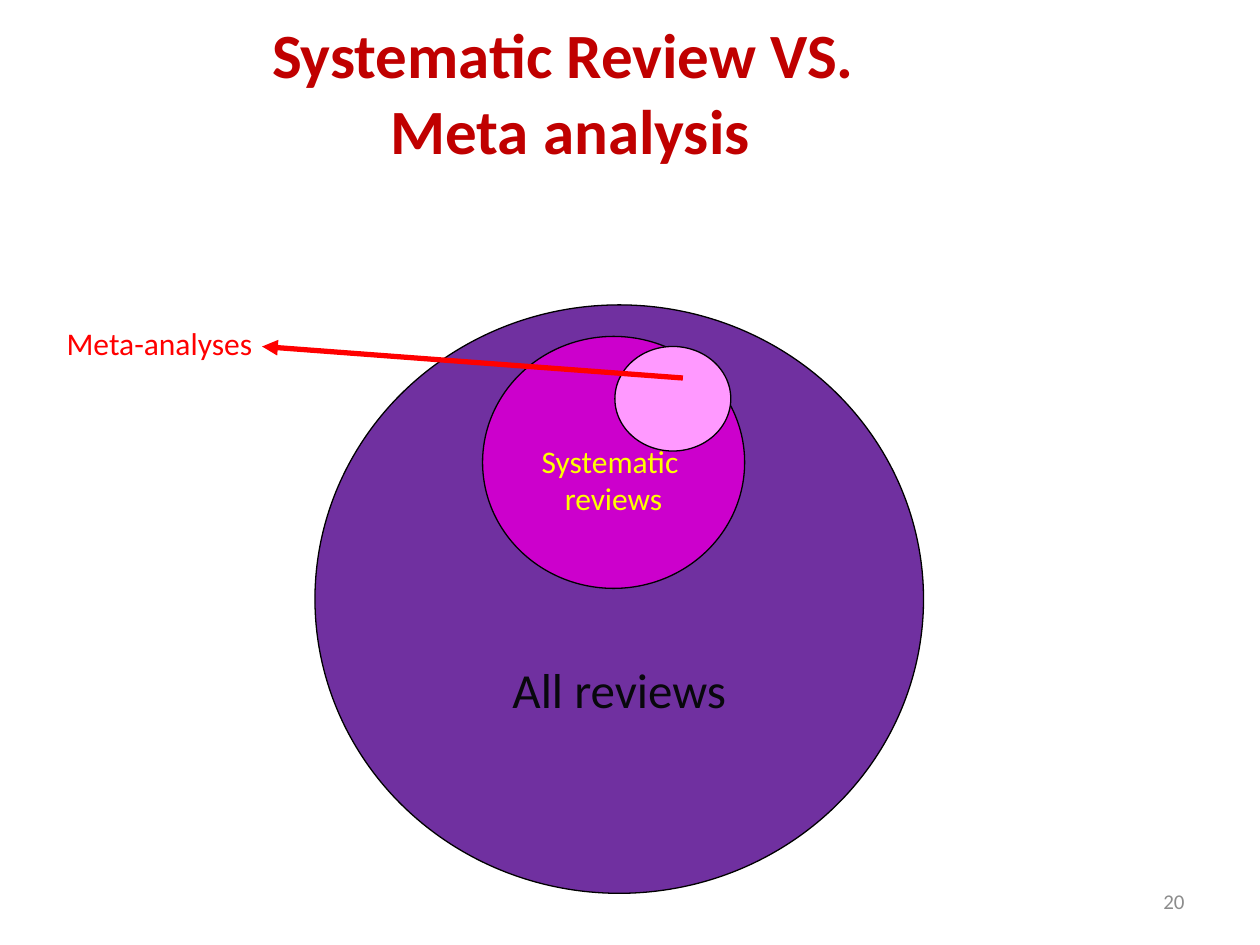
import pptx
import pptx.dml.color
import pptx.enum.shapes
import pptx.enum.text
import pptx.oxml.ns
import pptx.util
from lxml import etree

Inches = pptx.util.Inches
Pt = pptx.util.Pt
ALIGN = pptx.enum.text.PP_ALIGN
ANCHOR = pptx.enum.text.MSO_ANCHOR


def color(hex_string):
    return pptx.dml.color.RGBColor.from_string(hex_string)


class ReviewSlide:
    """Holds the shared style and the slide being built."""

    font_name = "Calibri"
    outline = "000000"

    def __init__(self, presentation):
        title_only = presentation.slide_layouts[5]
        self.slide = presentation.slides.add_slide(title_only)
        self.shapes = self.slide.shapes

    def set_text(self, shape, lines, size, hex_string, align, bold=False):
        """Fill a shape with one paragraph per line."""
        frame = shape.text_frame
        frame.text = "\n".join(lines)
        for paragraph in frame.paragraphs:
            paragraph.alignment = align
            font = paragraph.font
            font.name = self.font_name
            font.size = Pt(size)
            font.bold = bold
            font.color.rgb = color(hex_string)

    def title(self, text, left, top, width, height):
        title = self.shapes.title
        title.left, title.top = Inches(left), Inches(top)
        title.width, title.height = Inches(width), Inches(height)
        self.set_text(title, [text], 36, "C00000", ALIGN.CENTER, bold=True)
        title.text_frame.vertical_anchor = ANCHOR.MIDDLE

    def circle(self, left, top, width, height, fill, lines=(), size=18,
               text_color="FFFF00", top_inset=0.05):
        """Draw an outlined oval; a larger top inset lowers its label."""
        shape = self.shapes.add_shape(
            pptx.enum.shapes.MSO_SHAPE.OVAL,
            Inches(left), Inches(top), Inches(width), Inches(height))
        shape.shadow.inherit = False
        shape.fill.solid()
        shape.fill.fore_color.rgb = color(fill)
        shape.line.color.rgb = color(self.outline)
        shape.line.width = Pt(0.75)
        if lines:
            self.set_text(shape, lines, size, text_color, ALIGN.CENTER)
            frame = shape.text_frame
            frame.word_wrap = False
            frame.vertical_anchor = ANCHOR.MIDDLE
            frame.margin_top = Inches(top_inset)

    def arrow(self, start, end, hex_string, width):
        connector = self.shapes.add_connector(
            pptx.enum.shapes.MSO_CONNECTOR.STRAIGHT,
            *(Inches(value) for value in start + end))
        connector.line.color.rgb = color(hex_string)
        connector.line.width = Pt(width)
        qn = pptx.oxml.ns.qn
        properties = connector._element.spPr
        line = properties.find(qn("a:ln"))
        etree.SubElement(line, qn("a:tailEnd"), type="triangle")
        etree.SubElement(properties, qn("a:effectLst"))

    def label(self, text, left, top, width, height, size, hex_string,
              align=ALIGN.LEFT, wrap=True, anchor=ANCHOR.TOP):
        box = self.shapes.add_textbox(
            Inches(left), Inches(top), Inches(width), Inches(height))
        self.set_text(box, [text], size, hex_string, align)
        box.text_frame.word_wrap = wrap
        box.text_frame.vertical_anchor = anchor


def main():
    presentation = pptx.Presentation()
    presentation.slide_width = Inches(10)
    presentation.slide_height = Inches(7.5)

    review = ReviewSlide(presentation)
    review.title("Systematic Review VS. \vMeta analysis", 0.2, 0.1, 8.65, 1.25)
    review.circle(2.5, 2.42, 4.83, 4.67, "7030A0", ["All reviews"],
                  size=28, text_color="08080C", top_inset=1.47)
    review.circle(3.83, 2.67, 2.08, 2, "CC00CC", ["Systematic ", "reviews"],
                  top_inset=0.32)
    review.circle(4.88, 2.75, 0.92, 0.83, "FF99FF")
    review.arrow((5.42, 3), (2.08, 2.75), "FF0000", 3)
    review.label("Meta-analyses", 0.43, 2.52, 1.69, 0.4, 18, "FF0000",
                 wrap=False)
    review.label("20", 7.17, 6.95, 2.33, 0.4, 12, "8C8C8C",
                 align=ALIGN.RIGHT, anchor=ANCHOR.MIDDLE)

    presentation.save("out.pptx")


if __name__ == "__main__":
    main()
